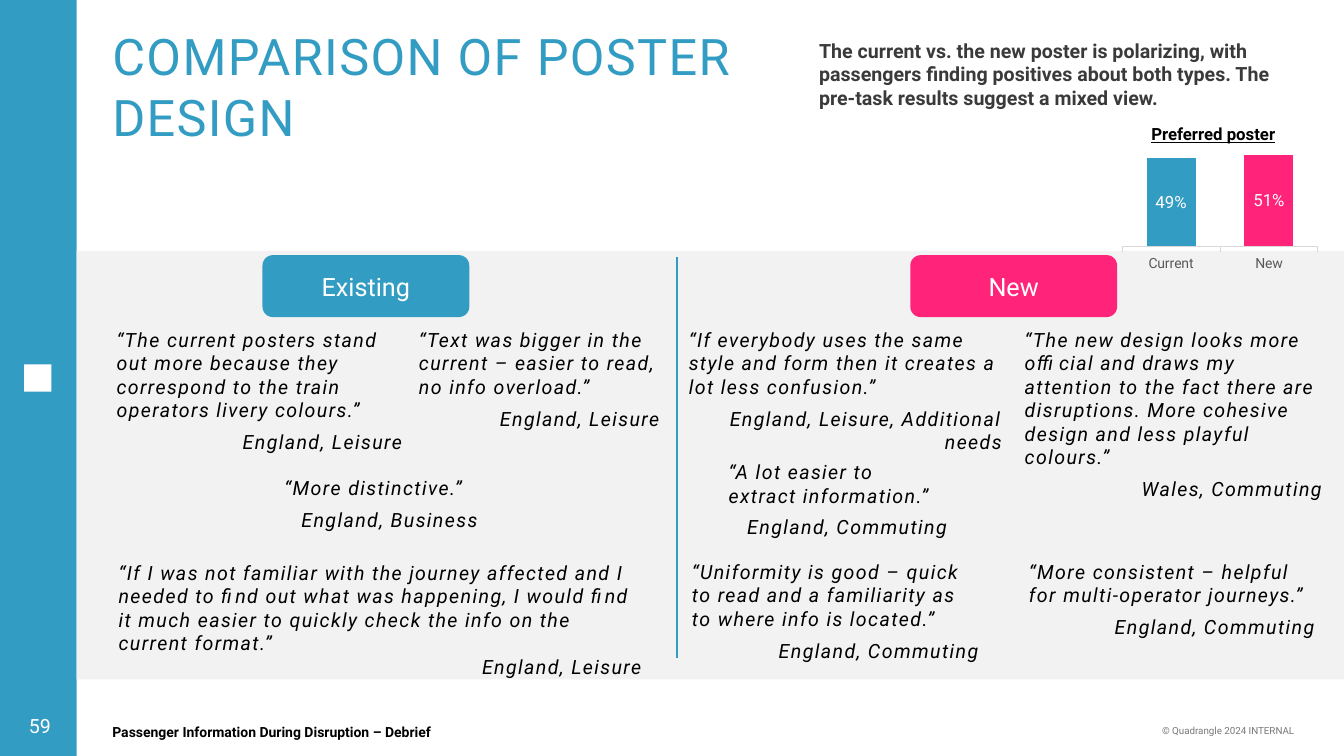
import pptx
import pptx.chart.data
import pptx.dml.color
import pptx.enum.chart
import pptx.enum.shapes
import pptx.enum.text
import pptx.oxml
import pptx.oxml.ns
import pptx.util

EMU_PER_PX = 9525
FONT = "Roboto"
RGB = pptx.dml.color.RGBColor
BLUE = RGB(0x33, 0x9C, 0xC2)
PINK = RGB(0xFF, 0x24, 0x7A)
PALE = RGB(0xF2, 0xF2, 0xF2)
WHITE = RGB(0xFF, 0xFF, 0xFF)
BLACK = RGB(0, 0, 0)
CHARCOAL = RGB(0x3A, 0x3A, 0x3A)
LABEL_GREY = RGB(0x59, 0x59, 0x59)
NOTICE_GREY = RGB(0x79, 0x79, 0x79)
AXIS_GREY = RGB(0xD9, 0xD9, 0xD9)

ALIGN = pptx.enum.text.PP_ALIGN
ANCHOR = pptx.enum.text.MSO_ANCHOR
SHAPE = pptx.enum.shapes.MSO_SHAPE

NO_FILL = f'<c:spPr {pptx.oxml.ns.nsdecls("c", "a")}><a:noFill/><a:ln><a:noFill/></a:ln></c:spPr>'
PLOT_LAYOUT = (
    f'<c:layout {pptx.oxml.ns.nsdecls("c")}><c:manualLayout><c:layoutTarget val="inner"/>'
    '<c:xMode val="edge"/><c:yMode val="edge"/><c:x val="0.06"/><c:y val="0"/>'
    '<c:w val="0.88"/><c:h val="0.79"/></c:manualLayout></c:layout>'
)

TAGS = [("Existing", 250, BLUE), ("New", 867, PINK)]

# left, top, width, height, quote, speaker, space before the speaker
QUOTES = [
    (111, 312, 272, 121, "“The current posters stand out more because they correspond to the train "
     "operators livery colours.”", "England, Leisure", 6),
    (399, 312, 229, 99, "“Text was bigger in the current – easier to read, no info overload.”",
     "England, Leisure", 6),
    (271, 453, 184, 54, "“More distinctive.”", "England, Business", 6),
    (113, 534, 498, 113, "“If I was not familiar with the journey affected and I needed to find out "
     "what was happening, I would find it much easier to quickly check the info on the current "
     "format.”", "England, Leisure", 0),
    (656, 312, 298, 121, "“If everybody uses the same style and form then it creates a lot less "
     "confusion.”", "England, Leisure, Additional needs", 6),
    (976, 312, 283, 166, "“The new design looks more official and draws my attention to the fact "
     "there are disruptions. More cohesive design and less playful colours.”",
     "Wales, Commuting", 6),
    (694, 438, 208, 76, "“A lot easier to extract information.”", "England, Commuting", 6),
    (980, 533, 272, 76, "“More consistent – helpful for multi-operator journeys.”",
     "England, Commuting", 6),
    (659, 533, 273, 99, "“Uniformity is good – quick to read and a familiarity as to where info "
     "is located.”", "England, Commuting", 6),
]


def px(*lengths):
    return [pptx.util.Emu(length * EMU_PER_PX) for length in lengths]


class PosterSlide:
    def __init__(self, presentation):
        self.slide = presentation.slides.add_slide(presentation.slide_layouts[5])
        self.shapes = self.slide.shapes

    def style_font(self, font, size, color, bold=False, italic=False, underline=False):
        font.name = FONT
        font.size = pptx.util.Pt(size)
        font.color.rgb = color
        font.bold, font.italic, font.underline = bold, italic, underline

    def fill_paragraph(self, paragraph, words, size, color, align=ALIGN.LEFT, tracked=False,
                       **style):
        """Set and format the words; tracked adds one point between letters."""
        paragraph.text = words
        paragraph.alignment = align
        for run in paragraph.runs:
            self.style_font(run.font, size, color, **style)
            if tracked:
                run.font._element.set("spc", "100")

    def prepare(self, frame, anchor=ANCHOR.TOP, inset=0):
        """Set wrapping, anchor and, unless inset is None, all four margins."""
        frame.word_wrap = True
        frame.auto_size = pptx.enum.text.MSO_AUTO_SIZE.NONE
        frame.vertical_anchor = anchor
        if inset is not None:
            frame.margin_left = frame.margin_right = px(inset)[0]
            frame.margin_top = frame.margin_bottom = px(inset)[0]

    def title(self, box, words):
        heading = self.shapes.title
        heading.left, heading.top, heading.width, heading.height = px(*box)
        self.prepare(heading.text_frame)
        self.fill_paragraph(heading.text_frame.paragraphs[0], words, 36, BLUE, tracked=True)

    def text(self, box, words, size, color, anchor=ANCHOR.TOP, inset=0, **style):
        frame = self.shapes.add_textbox(*px(*box)).text_frame
        self.prepare(frame, anchor, inset)
        self.fill_paragraph(frame.paragraphs[0], words, size, color, **style)
        return frame

    def quote(self, box, words, speaker, gap):
        frame = self.text(box, words, 14, BLACK, italic=True, tracked=True)
        credit = frame.add_paragraph()
        credit.space_before = pptx.util.Pt(gap)
        self.fill_paragraph(credit, speaker, 14, BLACK, ALIGN.RIGHT, italic=True, tracked=True)

    def block(self, box, color, kind=SHAPE.RECTANGLE):
        block = self.shapes.add_shape(kind, *px(*box))
        block.shadow.inherit = False
        block.fill.solid()
        block.fill.fore_color.rgb = color
        block.line.fill.background()
        return block

    def tag(self, box, words, color):
        frame = self.block(box, color, SHAPE.ROUNDED_RECTANGLE).text_frame
        self.prepare(frame, ANCHOR.MIDDLE, None)
        self.fill_paragraph(frame.paragraphs[0], words, 18, WHITE, ALIGN.CENTER)

    def divider(self, x, top, bottom):
        divider = self.shapes.add_connector(
            pptx.enum.shapes.MSO_CONNECTOR.STRAIGHT, *px(x, top, x, bottom))
        divider.line.color.rgb = BLUE
        divider.line.width = pptx.util.Pt(1.5)
        divider._element.spPr.append(pptx.oxml.parse_xml(
            f'<a:effectLst {pptx.oxml.ns.nsdecls("a")}/>'))

    def preference_chart(self, box, shares, colors):
        data = pptx.chart.data.CategoryChartData(number_format="0%")
        data.categories = list(shares)
        data.add_series("Series 1", list(shares.values()))
        chart = self.shapes.add_chart(
            pptx.enum.chart.XL_CHART_TYPE.COLUMN_CLUSTERED, *px(*box), data).chart
        chart.has_legend = chart.has_title = False
        self.style_font(chart.font, 10, BLACK)

        share_axis = chart.value_axis
        share_axis.minimum_scale, share_axis.maximum_scale = 0, 0.6
        share_axis.has_major_gridlines = False
        share_axis.visible = False
        poster_axis = chart.category_axis
        poster_axis.major_tick_mark = pptx.enum.chart.XL_TICK_MARK.OUTSIDE
        poster_axis.format.line.color.rgb = AXIS_GREY
        poster_axis.format.line.width = pptx.util.Pt(0.75)
        self.style_font(poster_axis.tick_labels.font, 10, LABEL_GREY)

        plot = chart.plots[0]
        plot.gap_width, plot.overlap = 100, -27
        plot.vary_by_categories = False
        for index, color in enumerate(colors):
            fill = plot.series[0].points[index].format.fill
            fill.solid()
            fill.fore_color.rgb = color
        plot.has_data_labels = True
        labels = plot.data_labels
        labels.show_value = True
        labels.number_format, labels.number_format_is_linked = "0%", False
        labels.position = pptx.enum.chart.XL_LABEL_POSITION.CENTER
        self.style_font(labels.font, 12, WHITE)

        chart_xml = chart._chartSpace.chart
        chart_xml.addnext(pptx.oxml.parse_xml(NO_FILL))
        for layout in chart_xml.plotArea.findall(pptx.oxml.ns.qn("c:layout")):
            chart_xml.plotArea.remove(layout)
        chart_xml.plotArea.insert(0, pptx.oxml.parse_xml(PLOT_LAYOUT))


def main():
    presentation = pptx.Presentation()
    presentation.slide_width, presentation.slide_height = px(1280, 720)
    poster = PosterSlide(presentation)

    poster.block((0, 0, 73, 720), BLUE)
    poster.block((23, 347, 26, 26), WHITE)
    poster.block((73, 239, 1207, 408), PALE)
    poster.title((107, 24, 759, 116), "COMPARISON OF POSTER DESIGN")
    poster.text((780, 37, 464, 68), "The current vs. the new poster is polarizing, with passengers "
                "finding positives about both types. The pre-task results suggest a mixed view.",
                14, CHARCOAL, bold=True)

    poster.divider(645, 245, 627)
    for words, left, color in TAGS:
        poster.tag((left, 243, 197, 59), words, color)
    for *box, words, speaker, gap in QUOTES:
        poster.quote(box, words, speaker, gap)

    poster.preference_chart((1056, 132, 212, 130), {"Current": 0.49, "New": 0.51}, (BLUE, PINK))
    poster.text((1087, 113, 181, 29), "Preferred poster", 12, BLACK, inset=None,
                bold=True, underline=True)

    poster.text((107, 689, 390, 16), "Passenger Information During Disruption – Debrief",
                10, BLACK, ANCHOR.MIDDLE, bold=True)
    poster.text((810, 685, 432, 21), "© Quadrangle 2024 INTERNAL", 7, NOTICE_GREY,
                ANCHOR.MIDDLE, None, align=ALIGN.RIGHT)
    poster.text((0, 673, 76, 37), "59", 14, WHITE, ANCHOR.MIDDLE, None, align=ALIGN.CENTER)
    presentation.save("out.pptx")


if __name__ == "__main__":
    main()
